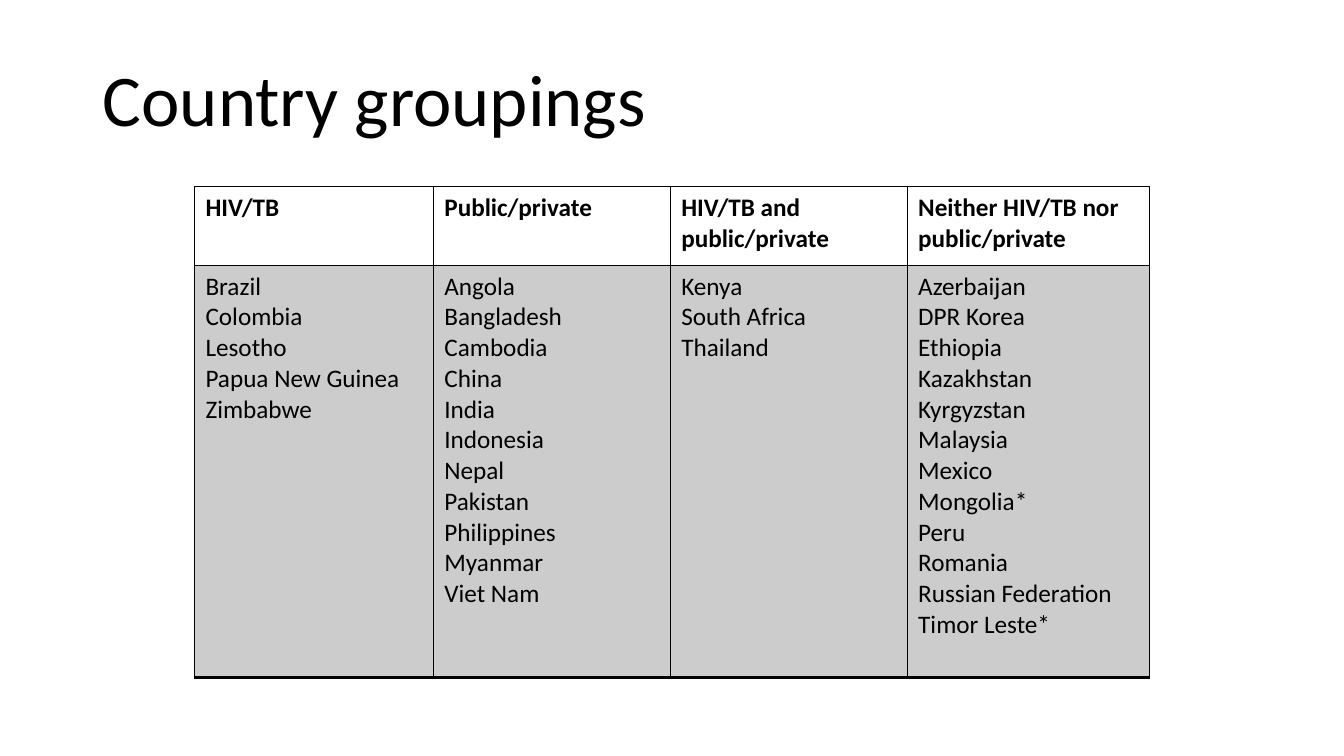
from dataclasses import dataclass

from lxml import etree
from pptx import Presentation
from pptx import util as u
from pptx.dml import color
from pptx.enum import text
from pptx.oxml import ns


@dataclass(frozen=True)
class Theme:
    font: str = "Calibri"
    ink: str = "000000"
    shade_alpha: int = 20
    title_size: int = 52
    table_size: int = 18
    thin: int = 1
    thick: int = 2


THEME = Theme()

GROUPS = {
    "HIV/TB": ["Brazil", "Colombia", "Lesotho", "Papua New Guinea", "Zimbabwe"],
    "Public/private": [
        "Angola", "Bangladesh", "Cambodia", "China", "India", "Indonesia",
        "Nepal", "Pakistan", "Philippines", "Myanmar", "Viet Nam",
    ],
    "HIV/TB and public/private": ["Kenya", "South Africa", "Thailand"],
    "Neither HIV/TB nor public/private": [
        "Azerbaijan", "DPR Korea", "Ethiopia", "Kazakhstan", "Kyrgyzstan",
        "Malaysia", "Mexico", "Mongolia*", "Peru", "Romania",
        "Russian Federation", "Timor Leste*",
    ],
}
COLUMN_WIDTHS = [6.02, 5.97, 5.97, 6.1]
ROW_HEIGHTS = [1.98, 10.39]


def style_text(frame, size, bold=False):
    for para in frame.paragraphs:
        for span in para.runs:
            span.font.name = THEME.font
            span.font.size = u.Pt(size)
            span.font.bold = bold
            span.font.color.rgb = color.RGBColor.from_string(THEME.ink)


def add_title(page, wording):
    box = page.shapes.add_textbox(u.Cm(2.34), u.Cm(0.51), u.Cm(29.21), u.Cm(4.19))
    frame = box.text_frame
    frame.word_wrap = True
    frame.vertical_anchor = text.MSO_ANCHOR.MIDDLE
    frame.text = wording
    frame.paragraphs[0].line_spacing = 0.9
    style_text(frame, THEME.title_size)


def shade(cell):
    cell.fill.solid()
    cell.fill.fore_color.rgb = color.RGBColor.from_string(THEME.ink)
    ink = cell._tc.tcPr.find(".//" + ns.qn("a:srgbClr"))
    etree.SubElement(ink, ns.qn("a:alpha"), val=str(THEME.shade_alpha * 1000))


def add_borders(cell, bottom_width):
    widths = {"L": THEME.thin, "R": THEME.thin, "T": THEME.thin, "B": bottom_width}
    for position, (side, width) in enumerate(widths.items()):
        line = etree.Element(ns.qn(f"a:ln{side}"), w=str(u.Pt(width)))
        fill = etree.SubElement(line, ns.qn("a:solidFill"))
        etree.SubElement(fill, ns.qn("a:srgbClr"), val=THEME.ink)
        cell._tc.tcPr.insert(position, line)


def fill_cell(cell, wording, header):
    cell.margin_left = cell.margin_right = u.Cm(0.28)
    cell.margin_top = cell.margin_bottom = u.Cm(0.15)
    cell.text_frame.text = wording
    style_text(cell.text_frame, THEME.table_size, bold=header)
    if header:
        cell.fill.background()
    else:
        shade(cell)
    add_borders(cell, THEME.thin if header else THEME.thick)


def add_group_table(page, groups):
    frame = page.shapes.add_table(
        len(ROW_HEIGHTS), len(groups), u.Cm(4.9), u.Cm(4.7),
        u.Cm(sum(COLUMN_WIDTHS)), u.Cm(sum(ROW_HEIGHTS)),
    )
    table = frame.table
    table.horz_banding = False
    for row, height in zip(table.rows, ROW_HEIGHTS):
        row.height = u.Cm(height)
    for index, (group, countries) in enumerate(groups.items()):
        table.columns[index].width = u.Cm(COLUMN_WIDTHS[index])
        fill_cell(table.cell(0, index), group, header=True)
        fill_cell(table.cell(1, index), "\n".join(countries), header=False)


def main():
    deck = Presentation()
    deck.slide_width, deck.slide_height = u.Cm(33.87), u.Cm(19.05)
    page = deck.slides.add_slide(deck.slide_layouts[6])
    add_title(page, "Country groupings")
    add_group_table(page, GROUPS)
    deck.save("out.pptx")


if __name__ == "__main__":
    main()
